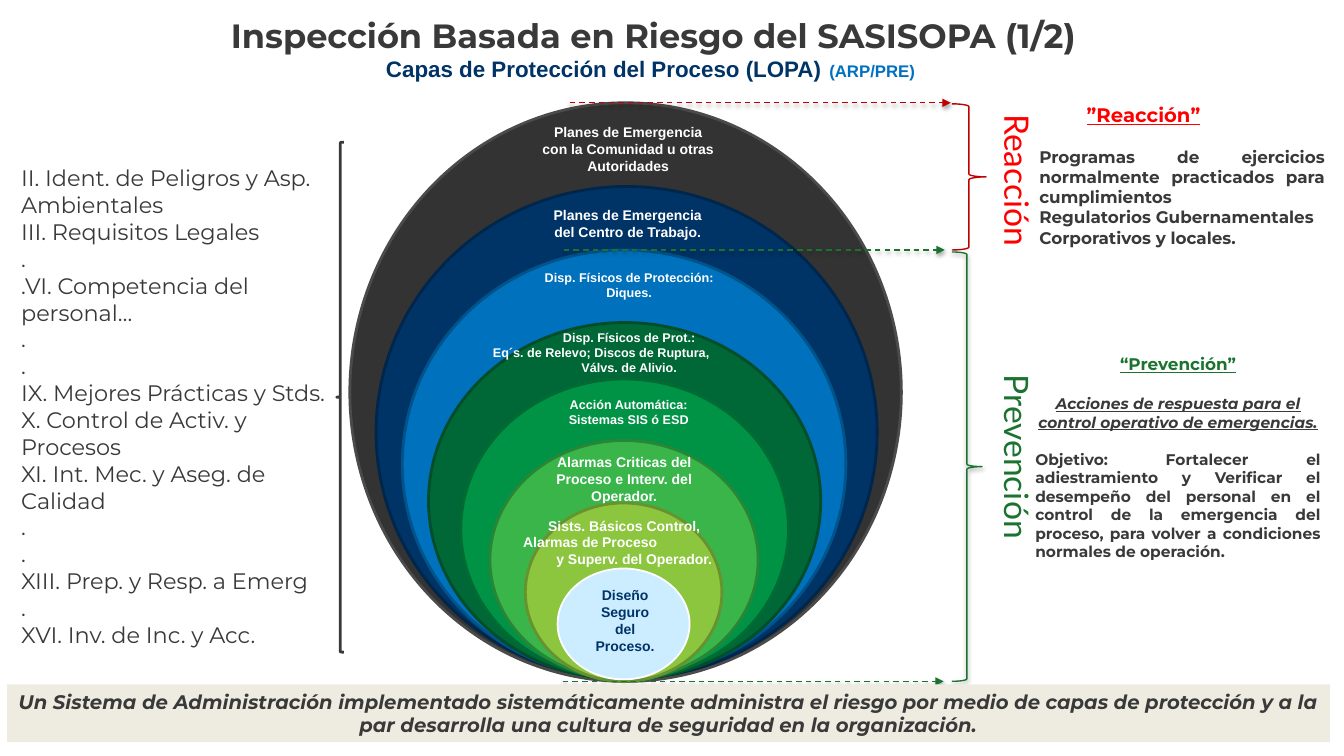
from dataclasses import dataclass, replace

from lxml import etree
from pptx import Presentation
from pptx.dml.color import RGBColor
from pptx.enum.dml import MSO_LINE
from pptx.enum.shapes import MSO_CONNECTOR, MSO_SHAPE
from pptx.enum.text import MSO_ANCHOR, MSO_AUTO_SIZE, PP_ALIGN
from pptx.oxml.ns import qn
from pptx.util import Inches, Pt

LEFT, CENTER, JUSTIFY = PP_ALIGN.LEFT, PP_ALIGN.CENTER, PP_ALIGN.JUSTIFY
TOP, MIDDLE = MSO_ANCHOR.TOP, MSO_ANCHOR.MIDDLE
ELLIPSE, BRACE, RECTANGLE = MSO_SHAPE.OVAL, MSO_SHAPE.RIGHT_BRACE, MSO_SHAPE.RECTANGLE
STRAIGHT = MSO_CONNECTOR.STRAIGHT
DASH = MSO_LINE.DASH
NO_AUTOFIT = MSO_AUTO_SIZE.NONE

ROWS = 75  # square cells, 75 rows to the slide height
SLIDE_WIDTH, SLIDE_HEIGHT = Inches(13.33), Inches(7.5)


@dataclass(frozen=True)
class Theme:
    heading_font: str = "Montserrat"
    label_font: str = "Arial"
    side_font: str = "Lato"
    ink: str = "393939"
    navy: str = "003366"
    blue: str = "0070C0"
    white: str = "FFFFFF"
    green: str = "1B732F"
    red: str = "FF0000"
    dark_red: str = "C00000"
    band: str = "EEECE1"
    title: int = 24
    spacer: int = 20
    subtitle: int = 16
    strong: int = 14
    body: int = 12
    detail: int = 11
    ring: int = 10
    small_ring: int = 9


@dataclass(frozen=True)
class Style:
    size: int
    font: str
    color: str
    bold: bool = False
    italic: bool = False
    underline: bool = False


@dataclass(frozen=True)
class Line:
    """One paragraph: (text, style) runs, alignment, points before, left indent in cells."""
    runs: tuple
    align: PP_ALIGN = LEFT
    before: float = 0
    indent: float = 0


def lines(style, align, *texts):
    return [Line(((text, style),), align) for text in texts]


class SlideBuilder:
    def __init__(self, theme):
        self.theme = theme
        self.presentation = Presentation()
        self.presentation.slide_width = SLIDE_WIDTH
        self.presentation.slide_height = SLIDE_HEIGHT
        self.slide = self.presentation.slides.add_slide(self.presentation.slide_layouts[1])
        self.shapes = self.slide.shapes

    def cells(self, *counts):
        return [round(SLIDE_HEIGHT * count / ROWS) for count in counts]

    def fill_text(self, text_frame, content, anchor=TOP, wrap=True):
        text_frame.auto_size = NO_AUTOFIT
        text_frame.word_wrap = wrap
        text_frame.vertical_anchor = anchor
        for index, line in enumerate(content):
            paragraph = text_frame.add_paragraph() if index else text_frame.paragraphs[0]
            properties = paragraph._p.get_or_add_pPr()
            properties.set("marL", str(self.cells(line.indent)[0]))
            properties.set("indent", "0")
            etree.SubElement(properties, qn("a:buNone"))
            paragraph.alignment = line.align
            paragraph.space_before = Pt(line.before)
            for text, style in line.runs:
                run = paragraph.add_run()
                run.text = text
                font = run.font
                font.size, font.name = Pt(style.size), style.font
                font.bold, font.italic = style.bold, style.italic
                font.underline = style.underline
                font.color.rgb = RGBColor.from_string(style.color)

    def placeholder(self, index, box, content):
        shape = self.slide.placeholders[index]
        shape.left, shape.top, shape.width, shape.height = self.cells(*box)
        self.fill_text(shape.text_frame, content)

    def text(self, box, content, rotation=0):
        shape = self.shapes.add_textbox(*self.cells(*box))
        shape.rotation = rotation
        self.fill_text(shape.text_frame, content, wrap=not rotation)

    def set_effects(self, shape, shadow):
        """Replace the theme shadow by none, or by a soft one straight below."""
        effects = etree.SubElement(shape._element.spPr, qn("a:effectLst"))
        if shadow:
            outer = etree.SubElement(effects, qn("a:outerShdw"), blurRad="40000",
                                     dist="20000", dir="5400000", rotWithShape="0")
            color = etree.SubElement(outer, qn("a:srgbClr"), val="000000")
            etree.SubElement(color, qn("a:alpha"), val="38000")

    def shape(self, kind, box, fill=None, line=None, width=1, rotation=0, shadow=False):
        shape = self.shapes.add_shape(kind, *self.cells(*box))
        shape.rotation = rotation
        if fill:
            shape.fill.solid()
            shape.fill.fore_color.rgb = RGBColor.from_string(fill)
        else:
            shape.fill.background()
        if line:
            shape.line.color.rgb = RGBColor.from_string(line)
            shape.line.width = Pt(width)
        else:
            shape.line.fill.background()
        self.set_effects(shape, shadow)
        return shape

    def dashed_arrow(self, left, top, length, color):
        arrow = self.shapes.add_connector(STRAIGHT, *self.cells(left, top, left + length, top))
        arrow.line.color.rgb = RGBColor.from_string(color)
        arrow.line.width = Pt(1)
        arrow.line.dash_style = DASH
        etree.SubElement(arrow.line._get_or_add_ln(), qn("a:tailEnd"), type="triangle")
        self.set_effects(arrow, shadow=True)


def add_layers(builder):
    theme = builder.theme
    label = Style(theme.ring, theme.label_font, theme.white, bold=True)
    small = replace(label, size=theme.small_ring)
    core = replace(label, color=theme.navy)
    layers = [
        ((34.7, 10.2, 54.7, 57.4), "333333", "4B4B4B", (47.8, 11.8, 29, 6.1),
         lines(label, CENTER, "Planes de Emergencia", "con la Comunidad u otras", "Autoridades")),
        ((37.3, 18.5, 49.7, 48.8), theme.navy, "00264B", (45.5, 20, 33.5, 4.4),
         lines(label, CENTER, "Planes de Emergencia", "del Centro de Trabajo.")),
        ((39.9, 24.8, 44, 42.5), "0071BC", "00548B", (47.9, 26.3, 29, 4),
         lines(small, CENTER, "Disp. Físicos de Protección:", "Diques.")),
        ((42.5, 32, 38.9, 35.4), "006837", "004D29", (47.9, 32.2, 29, 5.6),
         lines(small, CENTER, "Disp. Físicos de Prot.:")
         + lines(small, LEFT, "Eq´s. de Relevo; Discos de Ruptura,")
         + lines(small, CENTER, "Válvs. de Alivio.")),
        ((45.7, 37.6, 32.5, 29.8), "009245", "006C33", (54.9, 38.9, 14.9, 4),
         lines(small, CENTER, "Acción Automática: Sistemas SIS ó ESD")),
        ((48.6, 43.7, 26.6, 23.7), "39B54A", "2A8637", (51.5, 44.5, 20.8, 6.1),
         lines(label, CENTER, "Alarmas Criticas del Proceso e Interv. del Operador.")),
        ((52.1, 49.9, 19.5, 17.7), "8CC63F", "68922F", (50.9, 50.8, 22, 6.1),
         lines(label, CENTER, "Sists. Básicos Control,")
         + lines(label, LEFT, "Alarmas de Proceso")
         + [Line((("y Superv. del Operador.", label),), indent=3.3)]),
        ((55.3, 56.4, 13.1, 11), "CCECFF", theme.white, (57.7, 57.7, 8.6, 7.6),
         lines(core, CENTER, "Diseño Seguro del Proceso.")),
    ]
    for ring, fill, outline, caption, content in layers:
        width = 1.25 if outline == theme.white else 2
        builder.shape(ELLIPSE, ring, fill, outline, width)
        builder.text(caption, content)


def add_responses(builder):
    theme = builder.theme
    side = Style(theme.title, theme.side_font, theme.green)
    heading = Style(theme.body, theme.heading_font, theme.green, bold=True, underline=True)
    body = replace(heading, color=theme.ink, underline=False)
    detail = replace(body, size=theme.detail)
    actions = replace(detail, italic=True, underline=True)

    for left, top, color in ((55.9, 24.8, theme.green), (55.8, 67.6, theme.green),
                             (56.5, 10.2, theme.dark_red)):
        builder.dashed_arrow(left, top, 37.8, color)
    builder.shape(BRACE, (94.4, 25, 3, 42.6), line=theme.green, shadow=True)
    builder.shape(BRACE, (94.4, 10.3, 3.4, 14.5), line=theme.dark_red)
    builder.text((90.8, 43.8, 20.2, 5), lines(side, LEFT, "Prevención"), rotation=90)
    builder.text((93.3, 15.5, 15.3, 5),
                 lines(replace(side, color=theme.red), LEFT, "Reacción"), rotation=90)
    builder.text((101.7, 34.6, 30.3, 23.6), [
        Line((("“Prevención”", heading),), CENTER),
        Line((("Acciones de respuesta para el control operativo de emergencias.", actions),),
             CENTER, before=14.6),
        Line((("Objetivo: Fortalecer el adiestramiento y Verificar el desempeño del personal "
               "en el control de la emergencia del proceso, para volver a condiciones "
               "normales de operación.", detail),), JUSTIFY, before=13.4),
    ])
    reaction = replace(heading, size=theme.strong, color=theme.red)
    programs = "Programas de ejercicios normalmente practicados para cumplimientos"
    builder.text((102.1, 9.7, 30.3, 15.5), [
        Line((("”Reacción”", reaction),), indent=4.7),
        Line(((programs, body),), JUSTIFY, before=14.6),
        *lines(body, JUSTIFY, "Regulatorios Gubernamentales", "Corporativos y locales."),
    ])


def main():
    theme = Theme()
    builder = SlideBuilder(theme)
    title = Style(theme.title, theme.heading_font, theme.ink, bold=True)
    element = replace(title, size=theme.subtitle, bold=False)
    subtitle = Style(theme.subtitle, theme.label_font, theme.navy, bold=True)
    closing = replace(title, size=theme.strong, italic=True)

    builder.placeholder(0, (13.5, 1, 102.6, 5),
                        lines(title, CENTER, "Inspección Basada en Riesgo del SASISOPA (1/2)"))
    builder.placeholder(1, (1.1, 15.8, 34.3, 49.5), lines(
        element, LEFT, "II. Ident. de Peligros y Asp. Ambientales", "III. Requisitos Legales",
        ".", ".VI. Competencia del personal…", ".", ".", "IX. Mejores Prácticas y Stds.",
        "X. Control de Activ. y Procesos", "XI. Int. Mec. y Aseg. de Calidad", ".", ".",
        "XIII. Prep. y Resp. a Emerg", ".", "XVI. Inv. de Inc. y Acc."))
    add_layers(builder)
    add_responses(builder)
    builder.shape(BRACE, (33.4, 14.1, 0.7, 50.6), line=theme.ink, width=2, rotation=180)
    builder.text((37.3, 4.4, 54.9, 4.4), [Line((
        ("Capas de Protección del Proceso (LOPA)", subtitle),
        (" ", replace(subtitle, size=theme.spacer)),
        ("(ARP/PRE)", replace(subtitle, size=theme.body, color=theme.blue))))])
    band = builder.shape(RECTANGLE, (0.7, 67.9, 131.2, 5.7), theme.band)
    builder.fill_text(band.text_frame, lines(
        closing, CENTER, "Un Sistema de Administración implementado sistemáticamente administra "
        "el riesgo por medio de capas de protección y a la par desarrolla una cultura de "
        "seguridad en la organización."), MIDDLE)
    builder.presentation.save("out.pptx")


if __name__ == "__main__":
    main()
